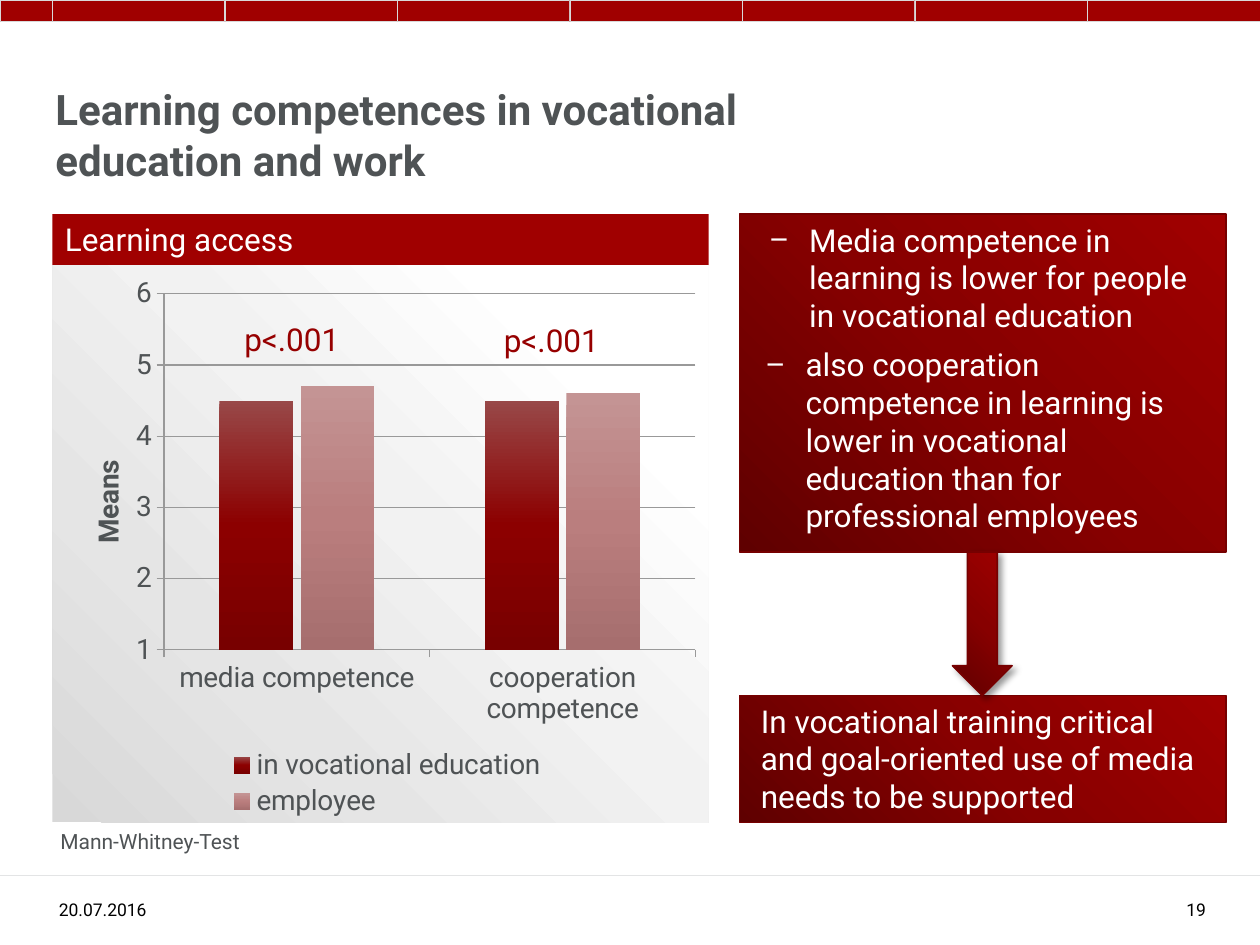
import pptx
import pptx.chart.data
import pptx.dml.color
import pptx.enum.chart
import pptx.enum.shapes
import pptx.enum.text
import pptx.oxml
import pptx.oxml.ns
import pptx.util

Pt = pptx.util.Pt
RGBColor = pptx.dml.color.RGBColor
RECTANGLE = pptx.enum.shapes.MSO_SHAPE.RECTANGLE
ANCHOR = pptx.enum.text.MSO_ANCHOR
ALIGN = pptx.enum.text.PP_ALIGN
qn = pptx.oxml.ns.qn
nsdecls = pptx.oxml.ns.nsdecls

FONT = "Roboto"
RED = RGBColor(0xA0, 0x00, 0x00)
DARK_RED = RGBColor(0x96, 0x00, 0x00)
MID_RED = RGBColor(0x87, 0x00, 0x00)
DEEP_RED = RGBColor(0x5F, 0x00, 0x00)
EDGE_RED = RGBColor(0x76, 0x00, 0x00)
GREY = RGBColor(0x4F, 0x53, 0x55)
AXIS_GREY = RGBColor(0x99, 0x99, 0x99)
LIGHT_GREY = RGBColor(0xD9, 0xD9, 0xD9)
RULE_GREY = RGBColor(0xE3, 0xE4, 0xE5)
PANEL_GREY = RGBColor(0xD8, 0xD8, 0xD8)
PALE_GREY = RGBColor(0xE5, 0xE5, 0xE5)
FAINT_GREY = RGBColor(0xF2, 0xF2, 0xF2)
WHITE = RGBColor(0xFF, 0xFF, 0xFF)
BLACK = RGBColor(0x00, 0x00, 0x00)

RED_STOPS = [(0, DEEP_RED), (50, MID_RED), (100, RED)]
PANEL_STOPS = [(0, PANEL_GREY), (28, PALE_GREY), (55, FAINT_GREY), (82, WHITE)]
SERIES_STOPS = [
    [(0, RGBColor(0x98, 0x48, 0x48)), (50, RGBColor(0x8C, 0x00, 0x00)),
     (100, RGBColor(0x78, 0x00, 0x00))],
    [(0, RGBColor(0xC4, 0x94, 0x94)), (50, RGBColor(0xBA, 0x7E, 0x7E)),
     (100, RGBColor(0xA6, 0x6E, 0x6E))],
]


def gradient_element(stops, angle):
    marks = "".join(
        f'<a:gs pos="{place * 1000}"><a:srgbClr val="{color}"/></a:gs>'
        for place, color in stops)
    return pptx.oxml.parse_xml(
        f'<a:gradFill rotWithShape="1" {nsdecls("a")}><a:gsLst>{marks}</a:gsLst>'
        f'<a:lin ang="{angle * 60000}" scaled="0"/></a:gradFill>')


def fill_gradient(fill, properties, stops, angle):
    fill.gradient()
    old = properties.find(qn("a:gradFill"))
    properties.replace(old, gradient_element(stops, angle))


def add_block(page, kind, place, line, width, color=None):
    block = page.shapes.add_shape(kind, *map(Pt, place))
    block.shadow.inherit = False
    if color is None:
        fill_gradient(block.fill, block._element.spPr, RED_STOPS, 315)
    else:
        block.fill.solid()
        block.fill.fore_color.rgb = color
    if line is None:
        block.line.fill.background()
    else:
        block.line.color.rgb = line
        block.line.width = Pt(width)
    return block


def write(frame, text, size, color, bold=False, align=ALIGN.LEFT, anchor=ANCHOR.TOP):
    frame.word_wrap = True
    frame.auto_size = pptx.enum.text.MSO_AUTO_SIZE.NONE
    frame.vertical_anchor = anchor
    para = frame.paragraphs[0]
    para.alignment = align
    para.space_before = Pt(0)
    span = para.add_run()
    span.text = text
    span.font.name = FONT
    span.font.size = Pt(size)
    span.font.bold = bold
    span.font.color.rgb = color
    return para


def add_text(page, place, text, size, color, **options):
    box = page.shapes.add_textbox(*map(Pt, place))
    write(box.text_frame, text, size, color, **options)


def move(holder, place):
    holder.left, holder.top, holder.width, holder.height = map(Pt, place)


def add_bullet(page, holder, place, text):
    page.shapes._spTree.append(holder._element)
    move(holder, place)
    para = write(holder.text_frame, text, 18, WHITE)
    properties = para._p.get_or_add_pPr()
    properties.set("marL", str(Pt(22.5)))
    properties.set("indent", str(-Pt(22.5)))
    properties.append(pptx.oxml.parse_xml(f'<a:buChar char="−" {nsdecls("a")}/>'))


def add_top_band(page):
    lead, height = 30, 12.5
    step = (720 - lead) / 7
    cells = [(0, lead)] + [(lead + index * step, step) for index in range(7)]
    for left, width in cells:
        add_block(page, RECTANGLE, (left, 0, width, height), LIGHT_GREY, 0.5, RED)


def add_rule(page):
    rule = page.shapes.add_connector(
        pptx.enum.shapes.MSO_CONNECTOR.STRAIGHT, Pt(0), Pt(500.4), Pt(720), Pt(500.4))
    rule.line.color.rgb = RULE_GREY
    rule.line.width = Pt(0.5)
    rule._element.spPr.append(pptx.oxml.parse_xml(f'<a:effectLst {nsdecls("a")}/>'))


def layout_element(left, top, width=None, height=None, inner=False):
    target = '<c:layoutTarget val="inner"/>' if inner else ""
    modes = '<c:xMode val="edge"/><c:yMode val="edge"/>'
    sizes = "".join(f'<c:{name} val="{value}"/>' for name, value in
                    zip("xywh", (left, top, width, height)) if value is not None)
    return pptx.oxml.parse_xml(
        f'<c:layout {nsdecls("c")}><c:manualLayout>{target}{modes}{sizes}'
        '</c:manualLayout></c:layout>')


def set_layout(parent, after, layout):
    for old in parent.findall(qn("c:layout")):
        parent.remove(old)
    if after is None:
        parent.insert(0, layout)
    else:
        parent.find(qn(after)).addnext(layout)


def add_means_chart(page):
    data = pptx.chart.data.CategoryChartData(number_format="0.0")
    data.categories = ["media competence", "cooperation competence"]
    data.add_series("in vocational education", (4.5, 4.5))
    data.add_series("employee", (4.7, 4.6))
    chart = page.shapes.add_chart(
        pptx.enum.chart.XL_CHART_TYPE.COLUMN_CLUSTERED,
        Pt(30), Pt(152), Pt(375), Pt(318), data).chart
    chart.has_title = False
    chart.font.name = FONT
    chart.font.size = Pt(16)
    chart.font.color.rgb = GREY

    panel = pptx.oxml.parse_xml(
        f'<c:spPr {nsdecls("c", "a")}><a:ln><a:noFill/></a:ln></c:spPr>')
    panel.insert(0, gradient_element(PANEL_STOPS, 315))
    area = chart._chartSpace.chart
    area.addnext(panel)

    plot = chart.plots[0]
    plot.gap_width = 150
    plot.overlap = -10
    plot.vary_by_categories = False
    for series, stops in zip(plot.series, SERIES_STOPS):
        form = series.format
        fill_gradient(form.fill, series._element.spPr, stops, 90)

    values = chart.value_axis
    values.minimum_scale, values.maximum_scale, values.major_unit = 1, 6, 1
    values.tick_labels.number_format = "0"
    values.tick_labels.number_format_is_linked = False
    values.major_gridlines.format.line.color.rgb = AXIS_GREY
    for axis in (values, chart.category_axis):
        axis.major_tick_mark = pptx.enum.chart.XL_TICK_MARK.OUTSIDE
        axis.format.line.color.rgb = AXIS_GREY
    span = values.axis_title.text_frame.paragraphs[0].add_run()
    span.text = "Means"
    span.font.name = FONT
    span.font.size = Pt(16)
    span.font.bold = True
    span.font.color.rgb = GREY

    chart.has_legend = True
    chart.legend.position = pptx.enum.chart.XL_LEGEND_POSITION.BOTTOM
    chart.legend.include_in_layout = False
    set_layout(area.plotArea, None, layout_element(0.17, 0.05, 0.81, 0.64, inner=True))
    set_layout(values.axis_title._element, "c:tx", layout_element(0.05, 0.34))
    set_layout(chart.legend._element, "c:legendPos", layout_element(0.26, 0.86, 0.5, 0.14))


def add_arrow(page):
    arrow = add_block(page, pptx.enum.shapes.MSO_SHAPE.DOWN_ARROW,
                      (544.3, 315.4, 34, 82), EDGE_RED, 1)
    effects = arrow._element.spPr.find(qn("a:effectLst"))
    effects.append(pptx.oxml.parse_xml(
        f'<a:outerShdw blurRad="{Pt(4)}" dist="{Pt(3)}" dir="2700000" {nsdecls("a")}>'
        '<a:srgbClr val="000000"><a:alpha val="40000"/></a:srgbClr></a:outerShdw>'))


def main():
    deck = pptx.Presentation()
    deck.slide_width, deck.slide_height = Pt(720), Pt(540)
    page = deck.slides.add_slide(deck.slide_layouts[3])
    title, first, second = page.placeholders

    add_top_band(page)
    add_rule(page)
    move(title, (24.5, 42.5, 499, 68.4))
    write(title.text_frame, "Learning competences in vocational education and work",
          24, GREY, bold=True, anchor=ANCHOR.MIDDLE)
    add_text(page, (26.6, 500.4, 79, 29), "20.07.2016", 10, BLACK, anchor=ANCHOR.BOTTOM)
    add_text(page, (637.2, 500.4, 59, 29), "19", 10, BLACK,
             align=ALIGN.RIGHT, anchor=ANCHOR.BOTTOM)

    header = add_block(page, RECTANGLE, (30, 122.4, 375, 29), None, 0, RED)
    write(header.text_frame, "Learning access", 18, WHITE)
    add_text(page, (27.4, 470, 374, 22), "Mann-Whitney-Test", 12, GREY)
    add_means_chart(page)
    for left, top in ((132.5, 179.3), (280.8, 180)):
        add_text(page, (left, top, 85, 29), "p<.001", 18, DARK_RED)

    add_block(page, RECTANGLE, (422.6, 122.4, 278, 193), EDGE_RED, 1)
    add_bullet(page, first, (432.7, 122.4, 266.4, 72.7),
               "Media competence in learning is lower for people in vocational education")
    add_bullet(page, second, (430.6, 193.7, 266.4, 116.6),
               "also cooperation competence in learning is lower in vocational "
               "education than for professional employees")
    add_block(page, RECTANGLE, (422.6, 397.4, 278, 72.7), EDGE_RED, 1)
    add_text(page, (427.7, 397.4, 266.4, 72.7),
             "In vocational training critical and goal-oriented use of media "
             "needs to be supported", 18, WHITE)
    add_arrow(page)
    deck.save("out.pptx")


if __name__ == "__main__":
    main()
